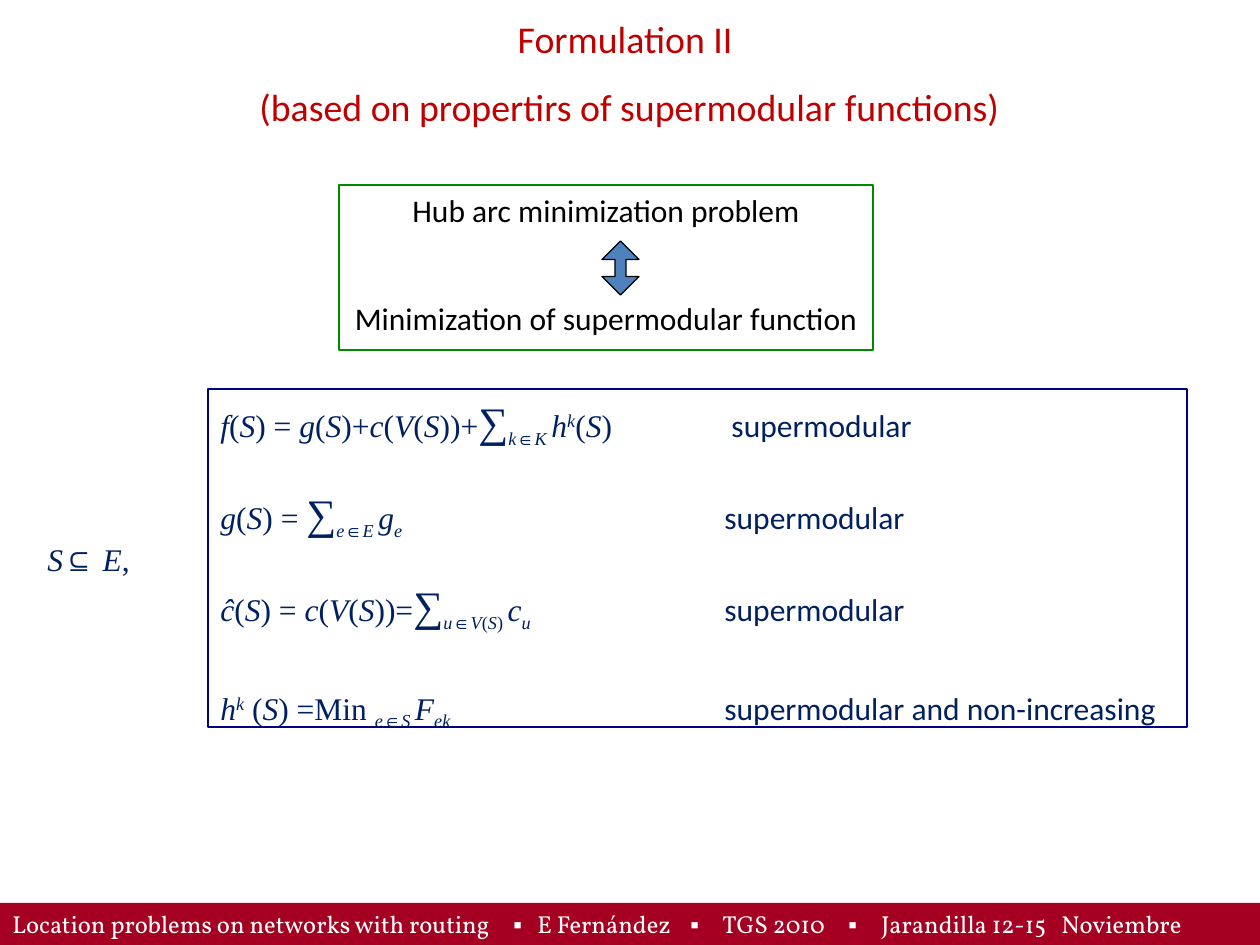
"""Build the slide on the supermodular formulation of the hub arc problem."""
from dataclasses import dataclass
from itertools import groupby
from typing import NamedTuple, Optional

from lxml.etree import SubElement
from pptx import Presentation
from pptx.dml.color import RGBColor
from pptx.enum.shapes import MSO_SHAPE
from pptx.enum.text import MSO_ANCHOR, PP_ALIGN
from pptx.oxml.ns import qn
from pptx.util import Emu, Pt


@dataclass(frozen=True)
class Theme:
    body_font: str = "Calibri"
    math_font: str = "Times New Roman"
    footer_font: str = "Vollkorn"
    title: str = "C00000"
    formula: str = "002060"
    formula_border: str = "000080"
    problem: str = "000000"
    problem_border: str = "008A00"
    arrow: str = "4F81BD"
    footer: str = "FFFFFF"
    footer_band: str = "A50021"
    title_size: float = 21.6
    body_size: float = 18
    sum_size: float = 24
    last_tab_size: float = 28
    footer_size: float = 14
    border: float = 0.75


class Box(NamedTuple):
    left: int
    top: int
    width: int
    height: int


class Term(NamedTuple):
    text: str
    baseline: int = 0
    size: Optional[float] = None
    upright: bool = False


class Formula(NamedTuple):
    terms: tuple[Term, ...]
    property: str
    tab_size: Optional[float] = None


THEME = Theme()
SUM = Term("∑", size=THEME.sum_size)
PROPERTY_TAB = 504
FOOTER_TABS = (501, 525, 678, 710, 836, 869, 1049)
FORMULAS = (
    Formula((Term("f(S) = g(S)+c(V(S))+"), SUM, Term("k∈K ", -25), Term("h"),
             Term("k", 30), Term("(S)")), " supermodular"),
    Formula((Term("g(S) = "), SUM, Term("e∈E ", -25), Term("g"), Term("e", -25)),
            "supermodular"),
    Formula((Term("ĉ(S) = c(V(S))="), SUM, Term("u∈V(S) ", -25), Term("c"),
             Term("u", -25)), "supermodular"),
    Formula((Term("h"), Term("k", 30), Term(" (S) ="), Term("Min ", upright=True),
             Term("e∈S ", -25), Term("F"), Term("ek", -25)),
            "supermodular and non-increasing", THEME.last_tab_size),
)


def px(length: int) -> Emu:
    """Turn px into EMU."""
    return Emu(round(length * 914400 / 126))


def add_panel(slide, box: Box, fill: Optional[str] = None,
              border: Optional[str] = None, preset=MSO_SHAPE.RECTANGLE):
    """Add a flat preset shape with top-anchored text."""
    panel = slide.shapes.add_shape(preset, *map(px, box))
    panel.shadow.inherit = False
    if fill:
        panel.fill.solid()
        panel.fill.fore_color.rgb = RGBColor.from_string(fill)
    else:
        panel.fill.background()
    if border:
        panel.line.color.rgb = RGBColor.from_string(border)
        panel.line.width = Pt(THEME.border)
    else:
        panel.line.fill.background()
    panel.text_frame.vertical_anchor = MSO_ANCHOR.TOP
    panel.text_frame.word_wrap = True
    return panel


def add_text_frame(slide, box: Box):
    """Add a wrapping text box and return its frame."""
    frame = slide.shapes.add_textbox(*map(px, box)).text_frame
    frame.word_wrap = True
    return frame


def next_paragraph(frame, index: int):
    """Return the first paragraph or a new one."""
    return frame.add_paragraph() if index else frame.paragraphs[0]


def style(paragraph, size: float, color: str, font: Optional[str] = None,
          align=PP_ALIGN.LEFT) -> None:
    """Set what all runs of a paragraph share."""
    paragraph.alignment = align
    paragraph.font.size = Pt(size)
    paragraph.font.color.rgb = RGBColor.from_string(color)
    if font:
        paragraph.font.name = font


def add_tabs(paragraph, stops: tuple[int, ...]) -> None:
    """Add left tab stops to a paragraph."""
    tabs = SubElement(paragraph._p.get_or_add_pPr(), qn("a:tabLst"))
    for stop in stops:
        SubElement(tabs, qn("a:tab"), pos=str(px(stop)), algn="l")


def add_run(paragraph, text: str, font: str, size: Optional[float] = None):
    """Add a run in its own font and optional size."""
    run = paragraph.add_run()
    run.text = text
    run.font.name = font
    if size:
        run.font.size = Pt(size)
    return run


def add_math(paragraph, terms: tuple[Term, ...]) -> None:
    """Write formula terms with letters in italics."""
    for term in terms:
        for is_letter, symbols in groupby(term.text, str.isalpha):
            run = add_run(paragraph, "".join(symbols), THEME.math_font, term.size)
            run.font.italic = is_letter and not term.upright
            if term.baseline:
                run.font._element.set("baseline", str(term.baseline * 1000))


def add_footer(slide) -> None:
    """Draw the footer band."""
    band = add_panel(slide, Box(0, 903, 1260, 42), fill=THEME.footer_band)
    paragraph = band.text_frame.paragraphs[0]
    add_tabs(paragraph, FOOTER_TABS)
    style(paragraph, THEME.footer_size, THEME.footer)
    credits = ("Location problems on networks with routing\t▪\tE Fernández\t▪\t"
               "TGS 2010\t▪\tJarandilla 12-15\tNoviembre")
    for is_mark, symbols in groupby(credits, lambda symbol: symbol == "▪"):
        add_run(paragraph, "".join(symbols),
                THEME.body_font if is_mark else THEME.footer_font)


def add_title(slide) -> None:
    """Write the two-line title."""
    frame = add_text_frame(slide, Box(94, 0, 1071, 123))
    frame.vertical_anchor = MSO_ANCHOR.MIDDLE
    title = frame.paragraphs[0]
    title.text = "Formulation II \v(based on propertirs of supermodular functions)"
    title.line_spacing = 1.5
    style(title, THEME.title_size, THEME.title, THEME.body_font, PP_ALIGN.CENTER)


def add_formulas(slide) -> None:
    """Draw the framed formulas and the set they range over."""
    frame = add_panel(slide, Box(208, 389, 979, 338),
                      border=THEME.formula_border).text_frame
    for index, formula in enumerate(FORMULAS):
        paragraph = next_paragraph(frame, index)
        if index:
            paragraph.space_before = Pt(22)
        add_tabs(paragraph, (PROPERTY_TAB,))
        style(paragraph, THEME.body_size, THEME.formula)
        add_math(paragraph, formula.terms)
        add_run(paragraph, "\t", THEME.math_font, formula.tab_size)
        add_run(paragraph, formula.property, THEME.body_font)
    subset = add_text_frame(slide, Box(35, 534, 116, 50)).paragraphs[0]
    style(subset, THEME.body_size, THEME.formula)
    add_math(subset, (Term("S⊆ E,"),))


def add_equivalence(slide) -> None:
    """Draw the two equivalent problems and the arrow between them."""
    frame = add_panel(slide, Box(339, 185, 534, 165),
                      border=THEME.problem_border).text_frame
    problems = ("Hub arc minimization problem", "Minimization of supermodular function")
    for index, problem in enumerate(problems):
        paragraph = next_paragraph(frame, index)
        paragraph.text = problem
        if index:
            paragraph.space_before = Pt(40)
        style(paragraph, THEME.body_size, THEME.problem, THEME.body_font,
              PP_ALIGN.CENTER)
    arrow = add_panel(slide, Box(602, 241, 37, 54), THEME.arrow, THEME.problem,
                      MSO_SHAPE.UP_DOWN_ARROW)
    arrow.adjustments[0] = 0.5
    arrow.adjustments[1] = 0.3


def main() -> None:
    """Build and save the slide."""
    deck = Presentation()
    deck.slide_width, deck.slide_height = px(1260), px(945)
    slide = deck.slides.add_slide(deck.slide_layouts[6])
    add_footer(slide)
    add_title(slide)
    add_formulas(slide)
    add_equivalence(slide)
    deck.save("out.pptx")


if __name__ == "__main__":
    main()
